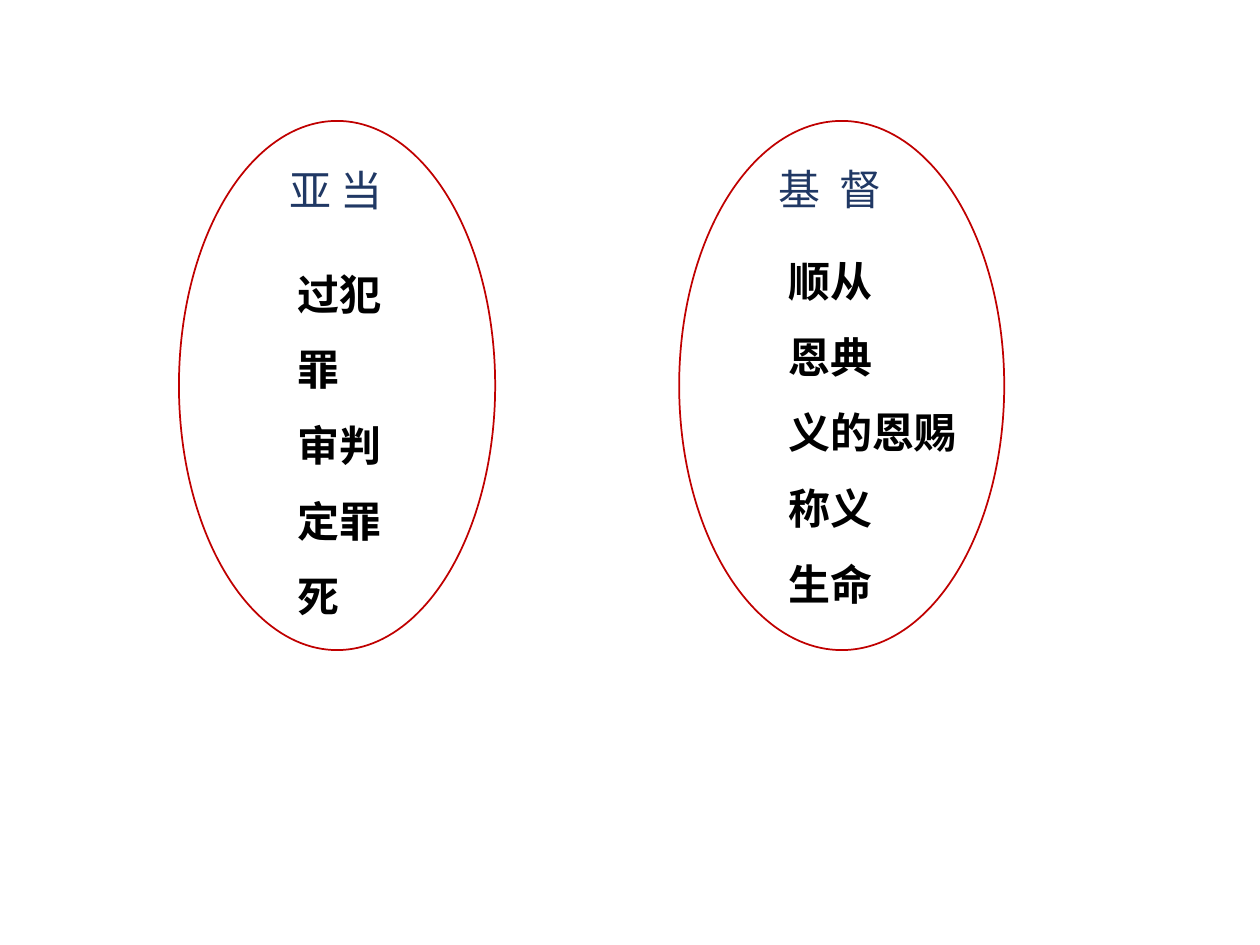
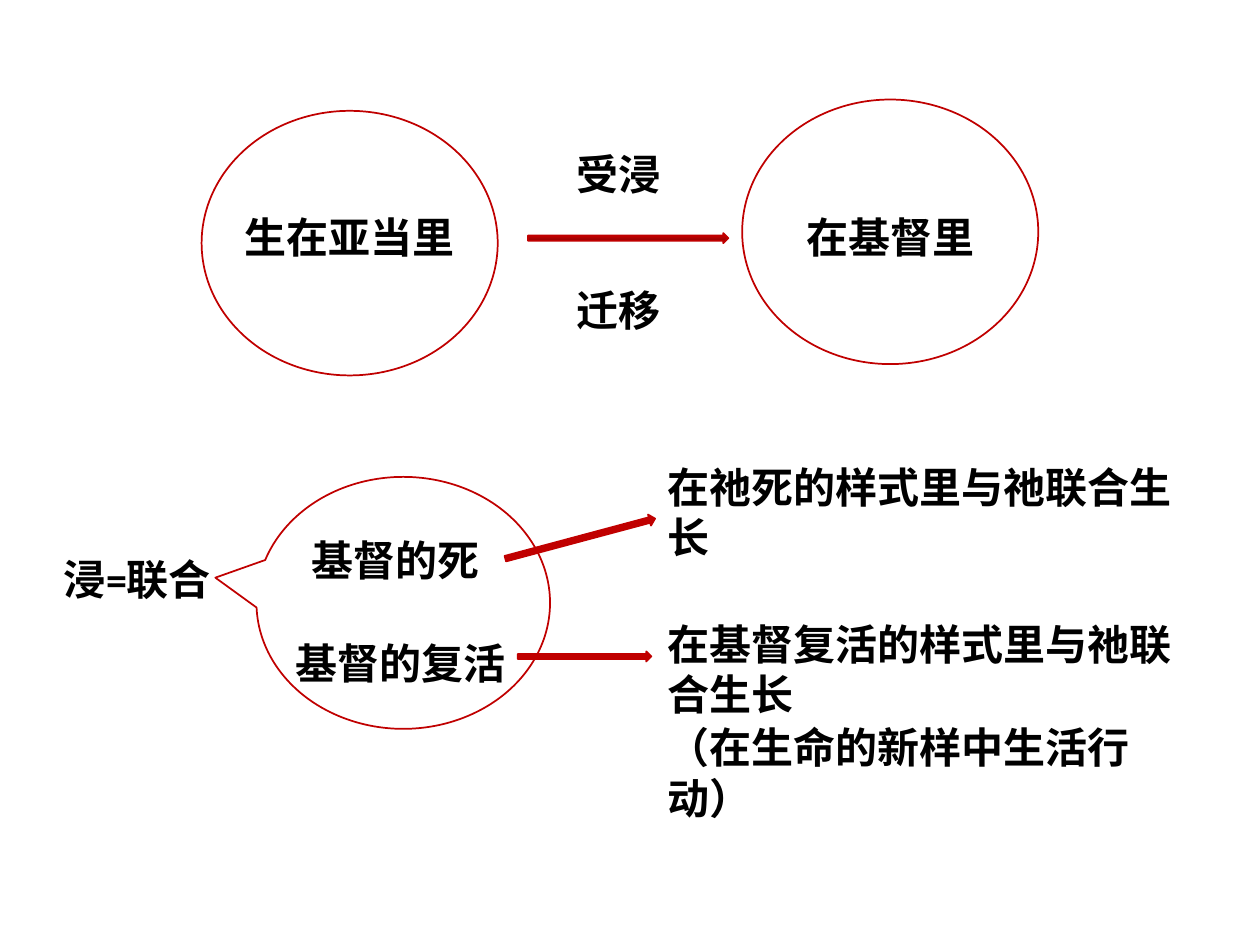
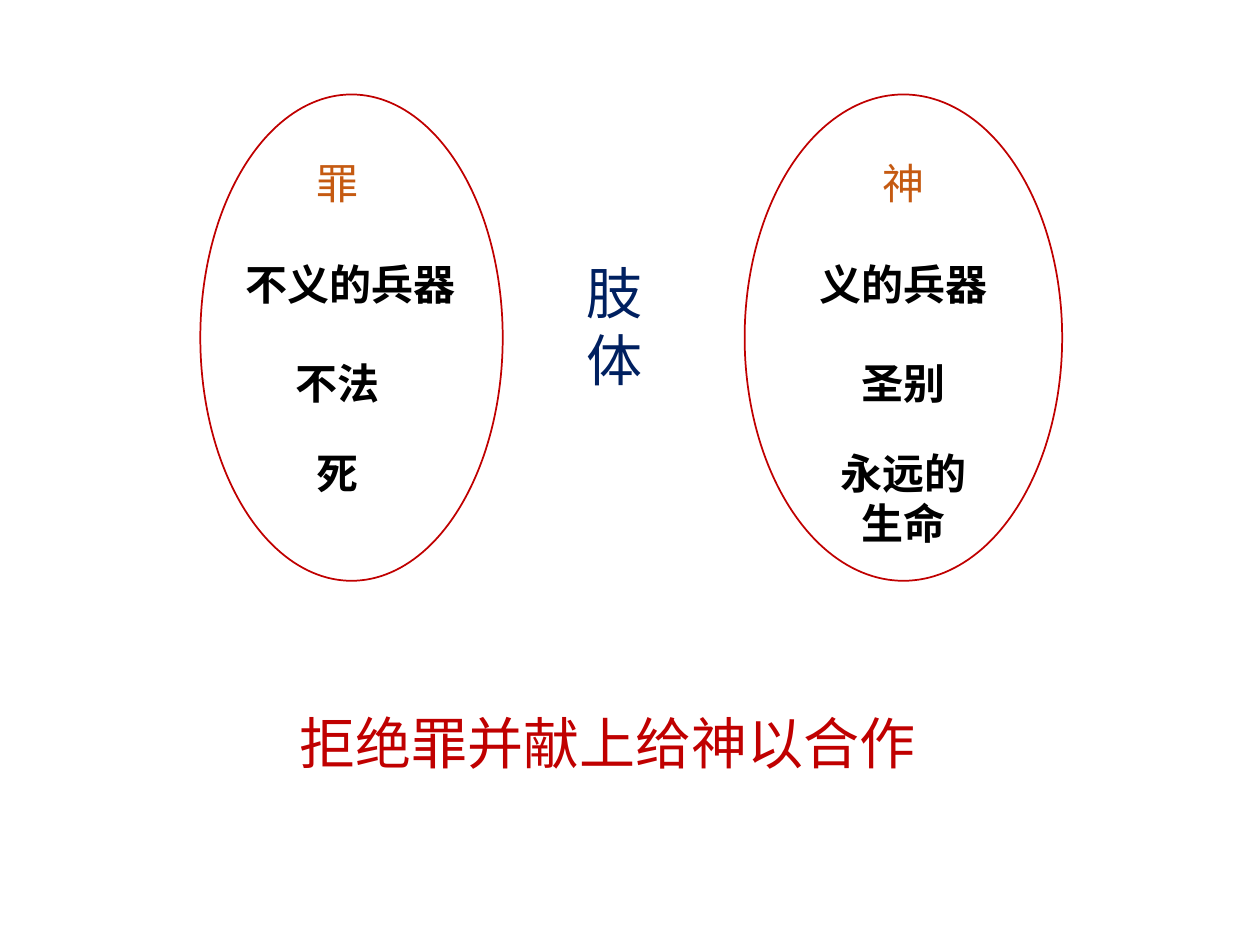
from pptx import Presentation
from pptx import util as u
from pptx.dml.color import RGBColor
from pptx.enum import lang, shapes, text

RED = RGBColor(0xC0, 0x00, 0x00)
BRIGHT_RED = RGBColor(0xE3, 0x00, 0x00)
DARK_RED = RGBColor(0x76, 0x03, 0x03)
NAVY = RGBColor(0x20, 0x38, 0x64)
DEEP_BLUE = RGBColor(0x00, 0x20, 0x60)
ORANGE = RGBColor(0xC5, 0x5A, 0x11)
BLACK = RGBColor(0x00, 0x00, 0x00)

BODY = dict(font="Calibri", color=BLACK, bold=True)
NAME = dict(font="Noto Sans CJK SC", color=NAVY)
POWER = dict(font="Noto Sans CJK SC", color=ORANGE)
MEMBERS = dict(font="Noto Sans CJK JP", color=DEEP_BLUE, size=32)
CONCLUSION = dict(font="Noto Sans CJK SC", color=RED, size=32)

LINE_HEIGHT = 0.4
CHARACTER = 1 / 3
INSET = 0.1

HEADS = [
    dict(oval=(1.42, 2.51), name="亚 当", name_at=(2.2, 1.26, 0.97), spacing=0,
         items=["过犯", "罪", "审判", "定罪", "死"], items_at=(2.26, 1.88)),
    dict(oval=(5.39, 2.58), name="基 督", name_at=(6.08, 1.25, 1.06), spacing=270,
         items=["顺从", "恩典", "义的恩赐", "称义", "生命"], items_at=(6.16, 1.78)),
]
REALMS = [("生在亚当里", 1.84, 1.6, 0.88), ("在基督里", 6.3, 5.89, 0.79)]
TRANSFER = [("受浸", 4.48, 1.13), ("迁移", 4.48, 2.21)]
UNION = [("基督的死", 2.37, 4.19), ("基督的复活", 2.25, 5.01)]
RESULTS = [("在祂死的样式里与祂联合生长", 3.61),
           ("在基督复活的样式里与祂联合生长", 4.86),
           ("（在生命的新样中生活行动）", 5.68)]
MASTERS = [
    dict(oval=(1.59, 2.4), center=2.68, power="罪",
         items=[("不义的兵器", 2.78), ("不法", 2.68), ("死", 2.68)]),
    dict(oval=(5.91, 2.52), center=7.17, power="神",
         items=[("义的兵器", 7.17), ("圣别", 7.17), ("永远的\n生命", 7.17)]),
]
ITEM_TOPS = [2, 2.79, 3.5]


def add_text(slide, content, left, top, width=None, font="Calibri", color=BLACK,
             bold=False, size=24, spacing=1, wrap=False, centered=False):
    lines = content.split("\n")
    width = width or max(map(len, lines)) * CHARACTER + 2 * INSET
    height = len(lines) * LINE_HEIGHT * spacing * size / 24 + INSET
    box = slide.shapes.add_textbox(*map(u.Inches, (left, top, width, height)))
    frame = box.text_frame
    frame.text = content
    frame.word_wrap = wrap
    frame.auto_size = text.MSO_AUTO_SIZE.SHAPE_TO_FIT_TEXT
    for paragraph in frame.paragraphs:
        paragraph.line_spacing = spacing
        if centered:
            paragraph.alignment = text.PP_ALIGN.CENTER
        for run in paragraph.runs:
            run.font.name = font
            run.font.size = u.Pt(size)
            run.font.bold = bold
            run.font.color.rgb = color
            run.font.language_id = lang.MSO_LANGUAGE_ID.SIMPLIFIED_CHINESE
    return box


def add_centered(slide, content, center, top, **style):
    width = max(map(len, content.split("\n"))) * CHARACTER + 2 * INSET
    return add_text(slide, content, center - width / 2, top, width, centered=True, **style)


def add_outline(slide, kind, left, top, width, height, rotation=0):
    shape = slide.shapes.add_shape(kind, *map(u.Inches, (left, top, width, height)))
    shape.shadow.inherit = False
    shape.fill.background()
    shape.line.color.rgb = RED
    shape.line.width = u.Pt(1)
    shape.rotation = rotation
    return shape


def add_oval(slide, *place):
    return add_outline(slide, shapes.MSO_SHAPE.OVAL, *place)


def add_arrow(slide, left, top, width, height=0.08, rotation=0):
    arrow = add_outline(slide, shapes.MSO_SHAPE.RIGHT_ARROW, left, top, width, height, rotation)
    arrow.fill.solid()
    arrow.fill.fore_color.rgb = RED
    return arrow


def build_heads(slide):
    for head in HEADS:
        left, width = head["oval"]
        add_oval(slide, left, 0.96, width, 4.2)
        name = add_text(slide, head["name"], *head["name_at"], **NAME)
        for run in name.text_frame.paragraphs[0].runs:
            run.font._element.set("spc", str(head["spacing"]))
        add_text(slide, "\n".join(head["items"]), *head["items_at"], spacing=1.5, **BODY)


def build_baptism(slide):
    for label, label_left, oval_left, oval_top in REALMS:
        add_text(slide, label, label_left, 1.63, **BODY)
        add_oval(slide, oval_left, oval_top, 2.35, 2.1)
    transfer = add_arrow(slide, 4.19, 1.85, 1.59)
    transfer.fill.gradient()
    transfer.fill.gradient_angle = 270
    for stop, color in zip(transfer.fill.gradient_stops, (BRIGHT_RED, DARK_RED)):
        stop.color.rgb = color
    add_text(slide, "浸=联合", 0.41, 4.34, 1.37, wrap=True, **BODY)
    callout = add_outline(slide, shapes.MSO_SHAPE.OVAL_CALLOUT, 2.2, 3.62, 2, 2.33, 90)
    callout.adjustments[0] = -0.1
    callout.adjustments[1] = 0.64
    for label, left, top in TRANSFER + UNION:
        add_text(slide, label, left, top, **BODY)
    for label, top in RESULTS:
        add_text(slide, label, 5.2, top, 4.34, wrap=True, **BODY)
    add_arrow(slide, 3.99, 4.23, 1.23, 0.09, 345)
    add_arrow(slide, 4.11, 5.17, 1.06)


def build_members(slide):
    add_text(slide, "肢\n体", 4.56, 2, 0.64, **MEMBERS)
    for master in MASTERS:
        left, width = master["oval"]
        add_oval(slide, left, 0.75, width, 3.86)
        add_centered(slide, master["power"], master["center"], 1.2, **POWER)
        for (label, center), top in zip(master["items"], ITEM_TOPS):
            add_centered(slide, label, center, top, **BODY)
    add_text(slide, "拒绝罪并献上给神以合作", 2.28, 5.57, 5.2, wrap=True, **CONCLUSION)


def main():
    presentation = Presentation()
    presentation.slide_width = u.Inches(10)
    presentation.slide_height = u.Inches(7.5)
    for build in (build_heads, build_baptism, build_members):
        build(presentation.slides.add_slide(presentation.slide_layouts[6]))
    presentation.save("out.pptx")


if __name__ == "__main__":
    main()
